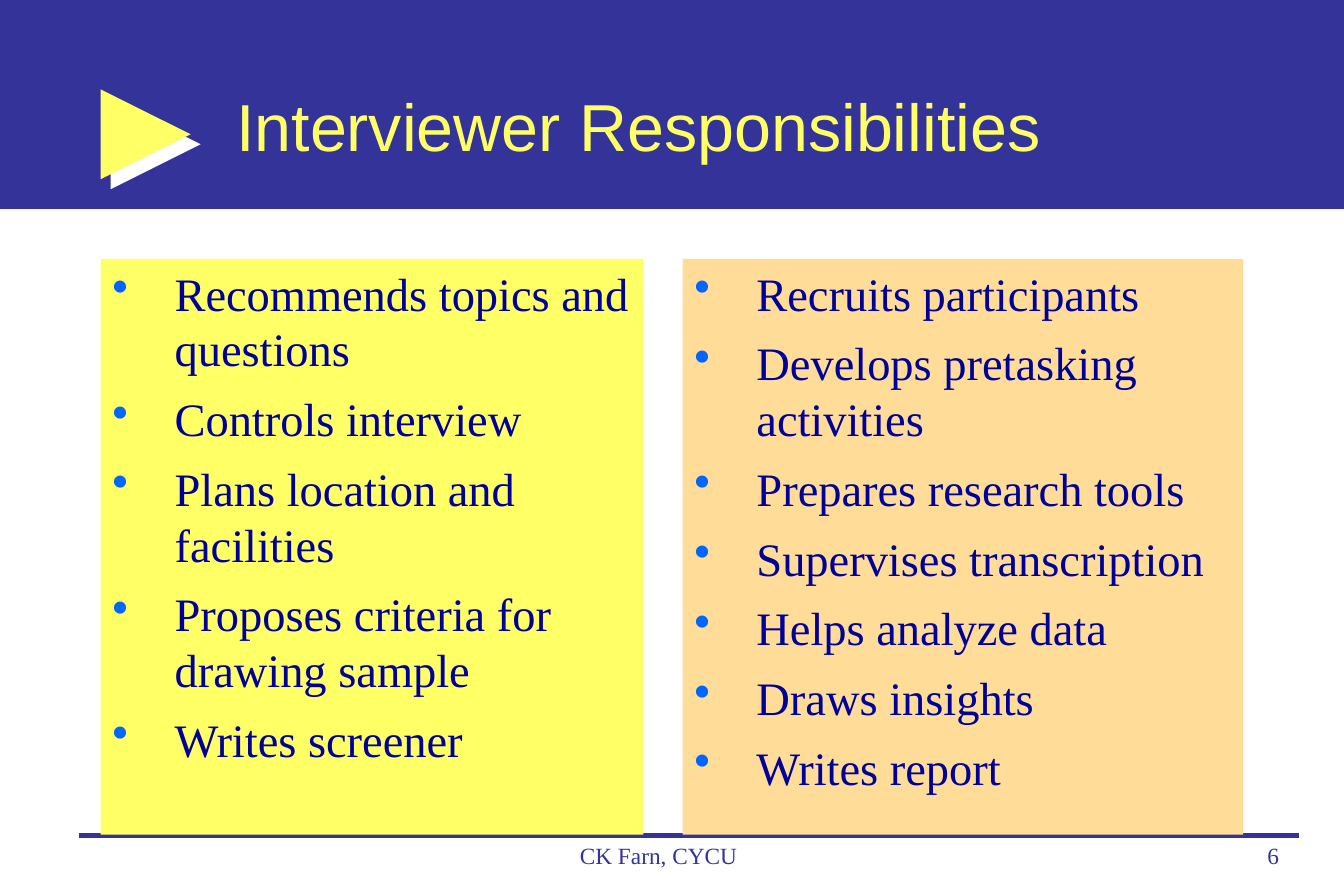
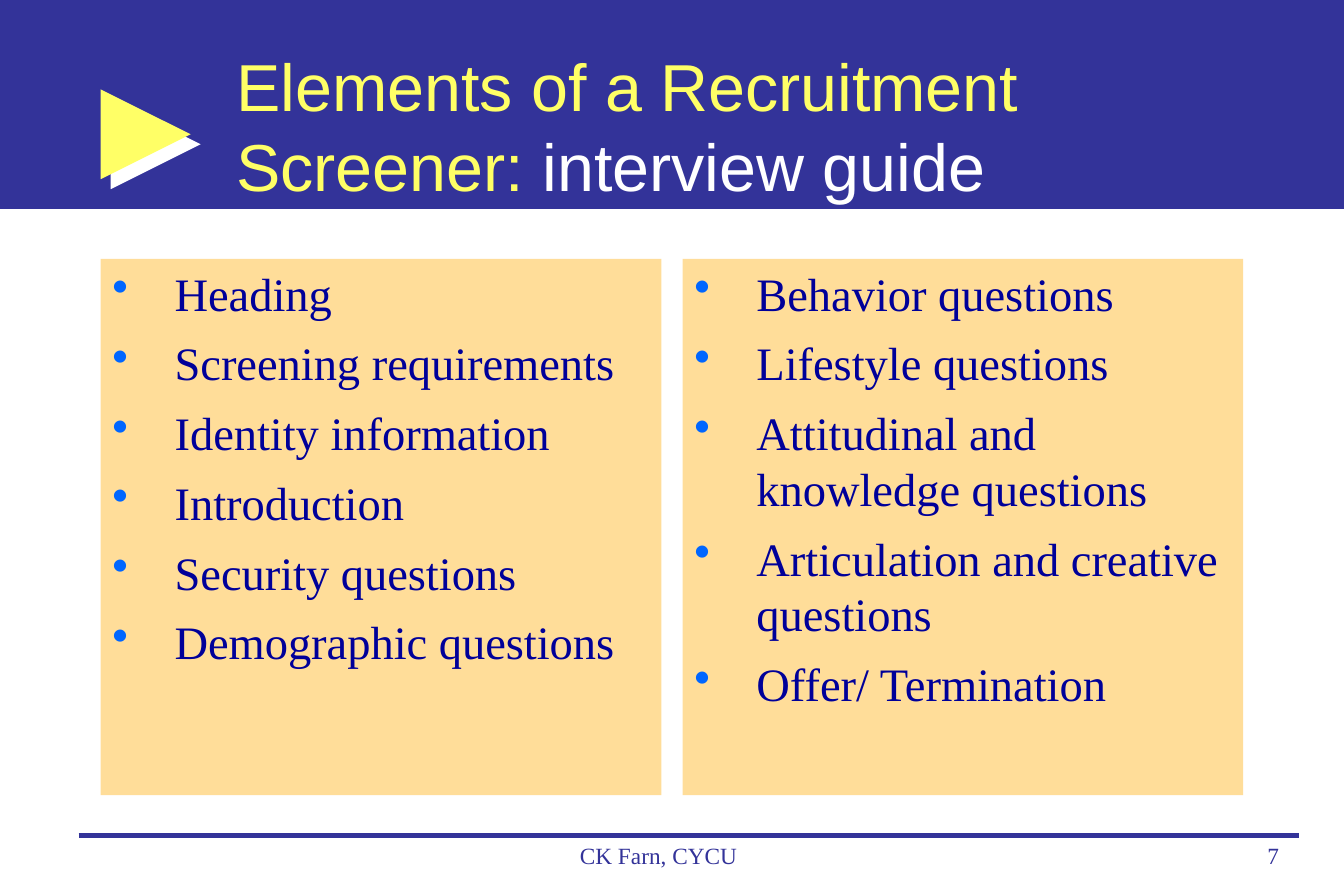
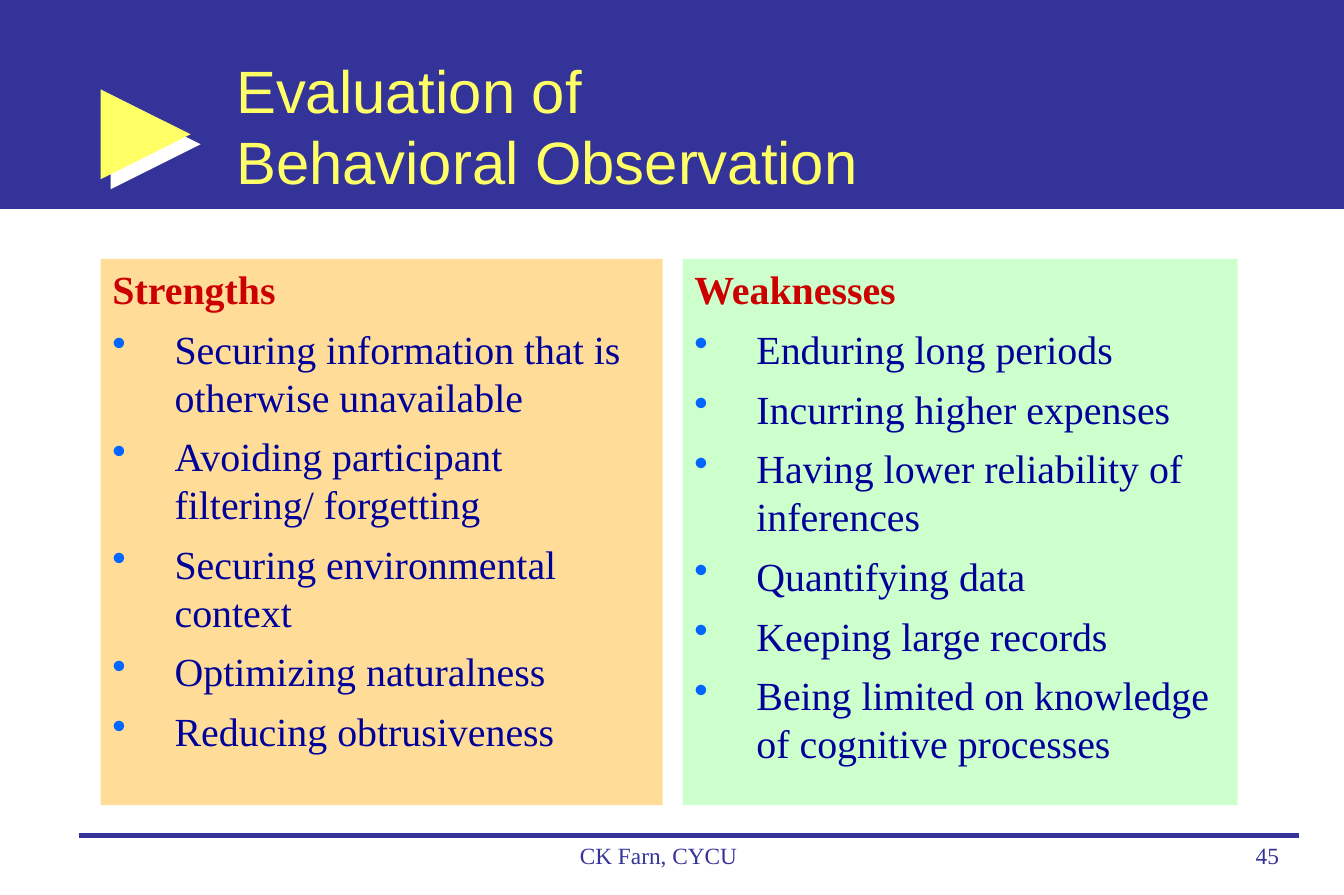
import pptx
import pptx.util
import pptx.dml.color
import pptx.enum.shapes
import pptx.enum.text
import pptx.oxml
import pptx.oxml.ns
from dataclasses import dataclass

Cm = pptx.util.Cm
Pt = pptx.util.Pt
SHAPE = pptx.enum.shapes.MSO_SHAPE
ALIGN = pptx.enum.text.PP_ALIGN
ANCHOR = pptx.enum.text.MSO_ANCHOR


@dataclass(frozen=True)
class Theme:
    # Colours
    navy: str = "333399"
    yellow: str = "FFFF66"
    white: str = "FFFFFF"
    peach: str = "FFDD99"
    mint: str = "CCFFCC"
    ink: str = "000099"
    red: str = "CC0000"
    bullet: str = "0066FF"
    # Fonts and type sizes
    title_font: str = "Arial"
    body_font: str = "Times New Roman"
    title_size: int = 40
    small_title_size: int = 36
    body_size: int = 28
    small_body_size: int = 24
    footer_size: int = 14
    # Paragraph rhythm
    space_before: float = 0.3
    indent: float = 1.32


THEME = Theme()
WIDTH, HEIGHT = 28.55, 19.02
LEFT_COLUMN, RIGHT_COLUMN, PANEL_TOP = 2.14, 14.5, 5.5
FOOTER_TOP = 17.75


def rgb(value):
    return pptx.dml.color.RGBColor.from_string(value)


def add_xml(parent, tag, content="", attributes=""):
    """Append one DrawingML element to parent."""
    namespace = pptx.oxml.ns.nsdecls("a")
    parent.append(pptx.oxml.parse_xml(
        f"<a:{tag} {namespace} {attributes}>{content}</a:{tag}>"))


def write(paragraph, text, *, size, color, font=THEME.body_font, bold=False,
          align=ALIGN.LEFT, bullet=False, hanging=False, before=0):
    """Add formatted text to a paragraph; a newline becomes a line break."""
    properties = paragraph._p.get_or_add_pPr()
    if hanging:
        properties.set("marL", str(Cm(THEME.indent)))
        properties.set("indent", str(-Cm(THEME.indent)))
    if bullet:
        add_xml(properties, "buClr", f'<a:srgbClr val="{THEME.bullet}"/>')
        add_xml(properties, "buChar", attributes='char="•"')
    paragraph.alignment = align
    paragraph.space_before = Pt(before)
    for number, line in enumerate(text.split("\n")):
        if number:
            paragraph.add_line_break()
        run = paragraph.add_run()
        run.text = line
        run.font.name = font
        run.font.size = Pt(size)
        run.font.bold = bold
        run.font.color.rgb = rgb(color)


class Deck:
    def __init__(self):
        self.presentation = pptx.Presentation()
        self.presentation.slide_width = Cm(WIDTH)
        self.presentation.slide_height = Cm(HEIGHT)
        self.slide = None

    def start_slide(self, number):
        """Add a slide with the band, arrow, rule and footer."""
        self.slide = self.presentation.slides.add_slide(
            self.presentation.slide_layouts[6])
        self.block(SHAPE.RECTANGLE, 0, 0, WIDTH, 4.44, THEME.navy)
        self.title_arrow()
        self.rule()
        self.footer("CK Farn, CYCU", 9.47, 9.04, ALIGN.CENTER)
        self.footer(str(number), 21.48, 5.94, ALIGN.RIGHT)

    def block(self, kind, left, top, width, height, fill):
        block = self.slide.shapes.add_shape(
            kind, Cm(left), Cm(top), Cm(width), Cm(height))
        block.shadow.inherit = False
        block.fill.solid()
        block.fill.fore_color.rgb = rgb(fill)
        block.line.fill.background()
        return block

    def title_arrow(self):
        arrow = self.block(SHAPE.RIGHT_ARROW, LEFT_COLUMN, 1.9, 1.91, 1.91,
                           THEME.yellow)
        arrow.adjustments[0] = 0.38
        arrow.adjustments[1] = 1
        effects = arrow._element.spPr.find(pptx.oxml.ns.qn("a:effectLst"))
        add_xml(effects, "outerShdw", f'<a:srgbClr val="{THEME.white}"/>',
                f'dist="{Pt(8.5)}" dir="2700000" algn="ctr" rotWithShape="0"')

    def rule(self):
        rule = self.slide.shapes.add_connector(
            pptx.enum.shapes.MSO_CONNECTOR.STRAIGHT,
            Cm(1.67), Cm(FOOTER_TOP), Cm(27.59), Cm(FOOTER_TOP))
        rule.line.color.rgb = rgb(THEME.navy)
        rule.line.width = Pt(3)
        add_xml(rule._element.spPr, "effectLst")

    def text_frame(self, left, top, width, height):
        frame = self.slide.shapes.add_textbox(
            Cm(left), Cm(top), Cm(width), Cm(height)).text_frame
        frame.word_wrap = True
        return frame

    def footer(self, text, left, width, align):
        frame = self.text_frame(left, FOOTER_TOP, width, 1.27)
        write(frame.paragraphs[0], text, size=THEME.footer_size,
              color=THEME.navy, align=align)

    def title(self, text, highlight="", size=THEME.title_size):
        frame = self.text_frame(4.77, 1.07, 21.64, 3.18)
        frame.vertical_anchor = ANCHOR.MIDDLE
        for part, color in ((text, THEME.yellow), (highlight, THEME.white)):
            if part:
                write(frame.paragraphs[0], part, size=size, color=color,
                      font=THEME.title_font)

    def panel(self, left, width, height, fill, items, heading=None,
              size=THEME.body_size):
        """Add a coloured bullet list, with an optional heading."""
        frame = self.block(SHAPE.RECTANGLE, left, PANEL_TOP, width, height,
                           fill).text_frame
        frame.word_wrap = True
        frame.vertical_anchor = ANCHOR.TOP
        lines = ([heading] if heading else []) + items
        for number, line in enumerate(lines):
            is_heading = line == heading
            paragraph = frame.add_paragraph() if number else frame.paragraphs[0]
            write(paragraph, line, size=size, bold=is_heading, hanging=True,
                  color=THEME.red if is_heading else THEME.ink,
                  bullet=not is_heading,
                  before=THEME.space_before * size if number else 0)


def main():
    deck = Deck()

    # Interviewer responsibilities
    deck.start_slide(6)
    deck.title("Interviewer Responsibilities")
    deck.panel(LEFT_COLUMN, 11.53, 12.24, THEME.yellow, [
        "Recommends topics and questions",
        "Controls interview",
        "Plans location and facilities",
        "Proposes criteria for drawing sample",
        "Writes screener",
    ])
    deck.panel(RIGHT_COLUMN, 11.91, 12.24, THEME.peach, [
        "Recruits participants",
        "Develops pretasking activities",
        "Prepares research tools",
        "Supervises transcription",
        "Helps analyze data",
        "Draws insights",
        "Writes report",
    ])

    # Recruitment screener
    deck.start_slide(7)
    deck.title("Elements of a Recruitment Screener: ", "interview guide")
    deck.panel(LEFT_COLUMN, 11.91, 11.4, THEME.peach, [
        "Heading",
        "Screening requirements",
        "Identity information",
        "Introduction",
        "Security questions",
        "Demographic questions",
    ])
    deck.panel(RIGHT_COLUMN, 11.91, 11.4, THEME.peach, [
        "Behavior questions",
        "Lifestyle questions",
        "Attitudinal and knowledge questions",
        "Articulation and creative questions",
        "Offer/ Termination",
    ])

    # Behavioral observation
    deck.start_slide(45)
    deck.title("Evaluation of\nBehavioral Observation",
               size=THEME.small_title_size)
    deck.panel(LEFT_COLUMN, 11.94, 11.61, THEME.peach, [
        "Securing information that is otherwise unavailable",
        "Avoiding participant filtering/ forgetting",
        "Securing environmental context",
        "Optimizing naturalness",
        "Reducing obtrusiveness",
    ], heading="Strengths", size=THEME.small_body_size)
    deck.panel(RIGHT_COLUMN, 11.79, 11.61, THEME.mint, [
        "Enduring long periods",
        "Incurring higher expenses",
        "Having lower reliability of inferences",
        "Quantifying data",
        "Keeping large records",
        "Being limited on knowledge of cognitive processes",
    ], heading="Weaknesses", size=THEME.small_body_size)

    deck.presentation.save("out.pptx")


if __name__ == "__main__":
    main()
